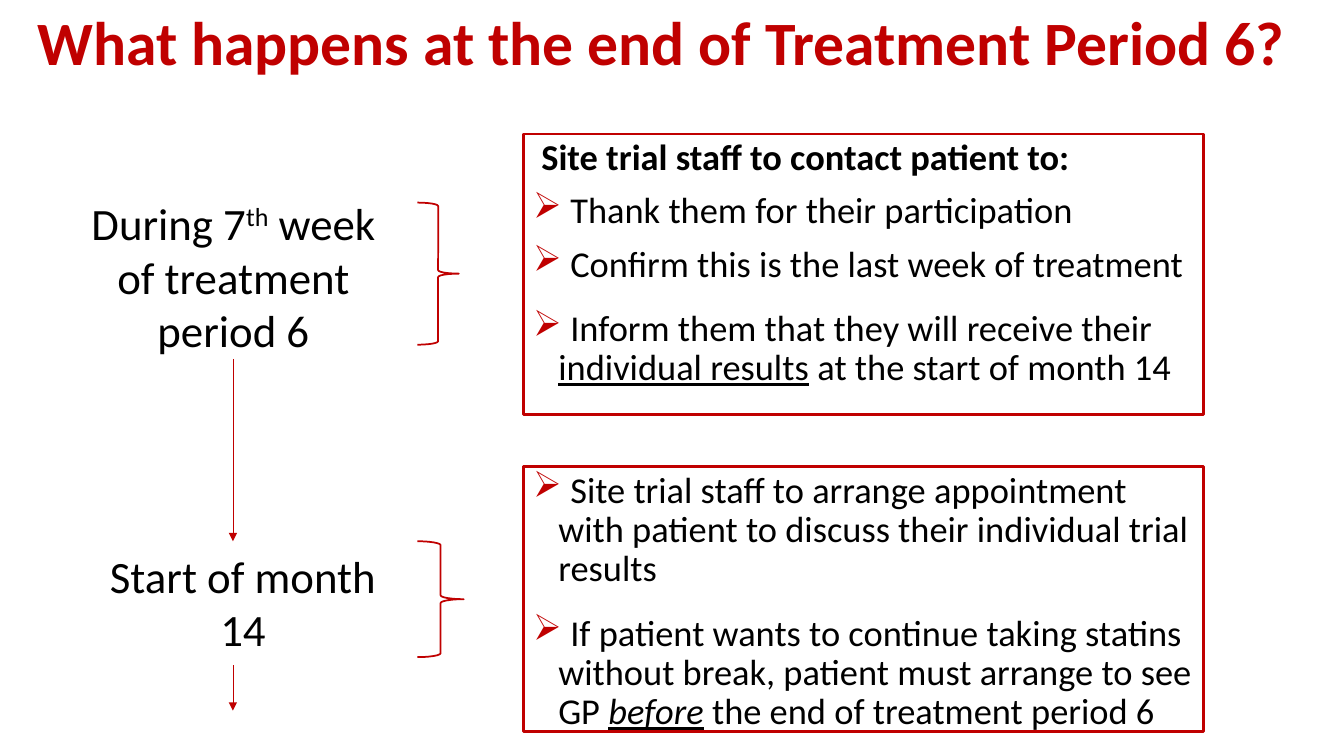
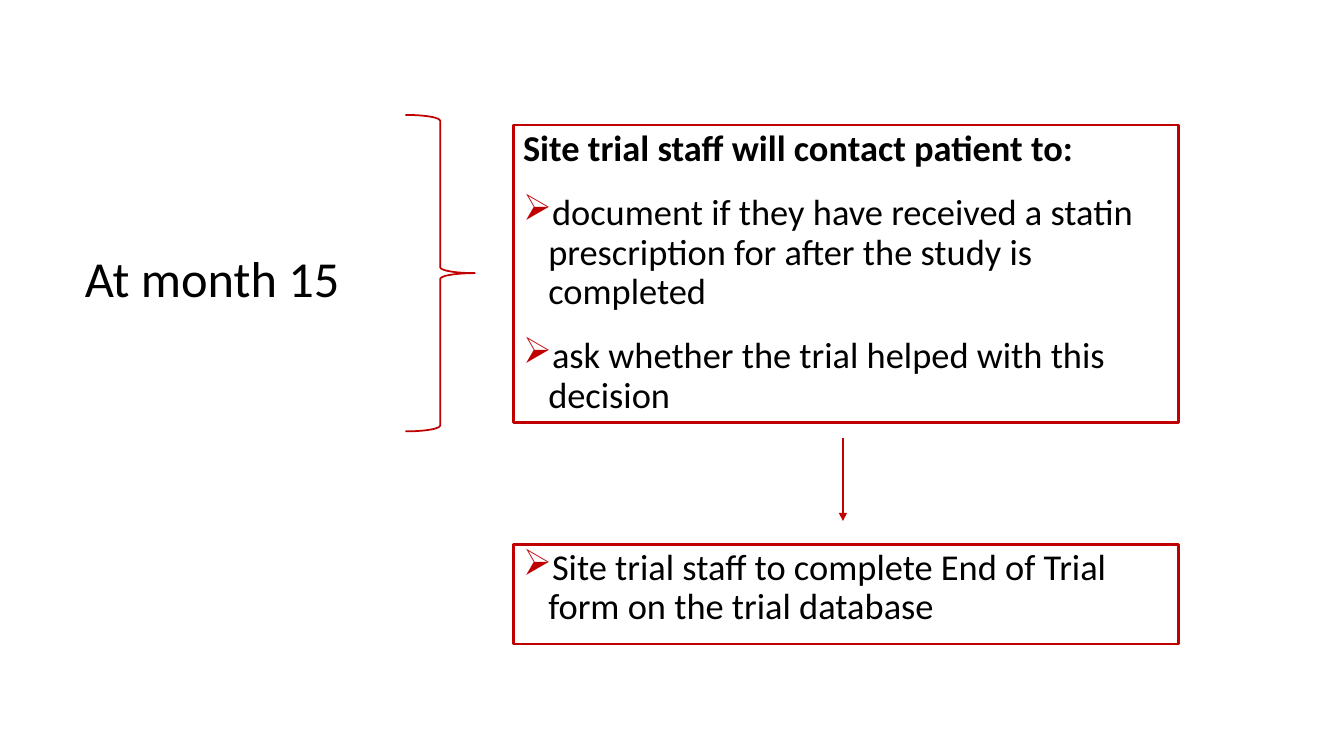
import pptx
import pptx.dml.color
import pptx.enum.shapes
import pptx.enum.text
import pptx.oxml.ns
import pptx.util
from lxml import etree

RED = pptx.dml.color.RGBColor(0xC0, 0x00, 0x00)
BLACK = pptx.dml.color.RGBColor(0x00, 0x00, 0x00)
FONT = "Calibri"
SHAPE = pptx.enum.shapes.MSO_SHAPE
ALIGN = pptx.enum.text.PP_ALIGN
ANCHOR = pptx.enum.text.MSO_ANCHOR
qn = pptx.oxml.ns.qn

deck = pptx.Presentation()
deck.slide_width = pptx.util.Inches(13.33)
deck.slide_height = pptx.util.Inches(7.5)

# Each area is (left, top, width, height) in percent of the slide.
# Each step is (bulleted, points after, [(text, style letters), ...]);
# styles: b bold, i italic, u underlined, ^ superscript.
# Each arrow is (x, top, bottom, line width).
SLIDES = [
    {
        "title": "What happens at the end of Treatment Period 6?",
        "labels": [
            ((5.78, 25.2, 23.18, 22.93), 32,
             [("During 7", ""), ("th", "^"), (" week of treatment period 6", "")]),
            ((6.45, 71.87, 23.26, 15.73), 32, [("Start of month 14", "")]),
        ],
        "braces": [(31.06, 26.8, 3.08, 18.8), (31.06, 71.6, 3.45, 15.33)],
        "boxes": [
            ((38.93, 17.73, 50.64, 37.07), [
                (False, 0, [(" Site trial staff to contact patient to:", "b")]),
                (True, 0, [(" Thank them for their participation", "")]),
                (True, 8, [(" Confirm this is the last week of treatment", "")]),
                (True, 0, [(" Inform them that they will receive their ", ""),
                           ("individual results", "u"),
                           (" at the start of month 14", "")]),
            ]),
            ((38.93, 61.73, 50.64, 35.07), [
                (True, 8, [(" Site trial staff to arrange appointment with patient "
                            "to discuss their individual trial results", "")]),
                (True, 8, [(" If patient wants to continue taking statins without break, "
                            "patient must arrange to see GP ", ""),
                           ("before", "iu"),
                           (" the end of treatment period 6", "")]),
            ]),
        ],
        "arrows": [(17.33, 47.47, 71.6, 0.5), (17.33, 88, 94, 0.5)],
    },
    {
        "title": None,
        "labels": [((4.28, 32, 23.03, 9.47), 36, [("At month 15", "")])],
        "braces": [(30.16, 15.2, 5.18, 41.87)],
        "boxes": [
            ((38.18, 16.53, 49.51, 39.33), [
                (False, 8, [("Site trial staff will contact patient to:", "b")]),
                (True, 8, [("document if they have received a statin prescription "
                            "for after the study is completed", "")]),
                (True, 8, [("ask whether the trial helped with this decision", "")]),
            ]),
            ((38.18, 72, 49.51, 13.2), [
                (True, 8, [("Site trial staff to complete End of Trial form "
                            "on the trial database", "")]),
            ]),
        ],
        "arrows": [(62.72, 58, 68.93, 1.25)],
    },
]


def share(*percents):
    """Turn alternating horizontal and vertical percentages into lengths."""
    sides = (deck.slide_width, deck.slide_height)
    return [round(sides[i % 2] * percent / 100) for i, percent in enumerate(percents)]


def write(paragraph, pieces, size, color=BLACK):
    """Add the styled pieces of text to a paragraph."""
    for text, style in pieces:
        run = paragraph.add_run()
        run.text = text
        run.font.name = FONT
        run.font.size = pptx.util.Pt(size)
        run.font.color.rgb = color
        run.font.bold = "b" in style
        run.font.italic = "i" in style
        run.font.underline = "u" in style
        if "^" in style:
            run.font._element.set("baseline", "30000")


for content in SLIDES:
    slide = deck.slides.add_slide(deck.slide_layouts[6])

    if content["title"]:
        title = slide.shapes.add_textbox(*share(-0.75, 0.2, 100, 11.6)).text_frame
        title.word_wrap = True
        title.vertical_anchor = ANCHOR.MIDDLE
        heading = title.paragraphs[0]
        heading.alignment = ALIGN.CENTER
        heading.line_spacing = 0.9
        write(heading, [(content["title"], "b")], 44, RED)

    for area, size, pieces in content["labels"]:
        label = slide.shapes.add_textbox(*share(*area)).text_frame
        label.word_wrap = True
        label.paragraphs[0].alignment = ALIGN.CENTER
        write(label.paragraphs[0], pieces, size)

    for area in content["braces"]:
        brace = slide.shapes.add_shape(SHAPE.RIGHT_BRACE, *share(*area))
        brace.shadow.inherit = False
        brace.fill.background()
        brace.line.color.rgb = RED
        brace.line.width = pptx.util.Pt(1.25)

    for area, steps in content["boxes"]:
        box = slide.shapes.add_shape(SHAPE.RECTANGLE, *share(*area))
        box.shadow.inherit = False
        box.fill.background()
        box.line.color.rgb = RED
        box.line.width = pptx.util.Pt(2)
        box.text_frame.word_wrap = True
        box.text_frame.vertical_anchor = ANCHOR.TOP
        for number, (bulleted, after, pieces) in enumerate(steps):
            step = box.text_frame.add_paragraph() if number else box.text_frame.paragraphs[0]
            step.alignment = ALIGN.LEFT
            step.line_spacing = 0.9
            step.space_before = pptx.util.Pt(10)
            step.space_after = pptx.util.Pt(after)
            if bulleted:
                properties = step._p.get_or_add_pPr()
                indent = pptx.util.Inches(0.25)
                properties.set("marL", str(indent))
                properties.set("indent", str(-indent))
                bullet_color = etree.SubElement(properties, qn("a:buClr"))
                etree.SubElement(bullet_color, qn("a:srgbClr"), val=str(RED))
                etree.SubElement(properties, qn("a:buChar"), char="➢")
            write(step, pieces, 26)

    for x, top, bottom, width in content["arrows"]:
        arrow = slide.shapes.add_connector(
            pptx.enum.shapes.MSO_CONNECTOR.STRAIGHT, *share(x, top, x, bottom))
        arrow.line.color.rgb = RED
        arrow.line.width = pptx.util.Pt(width)
        etree.SubElement(arrow.line._get_or_add_ln(), qn("a:tailEnd"), type="triangle")
        etree.SubElement(arrow._element.spPr, qn("a:effectLst"))

deck.save("out.pptx")
